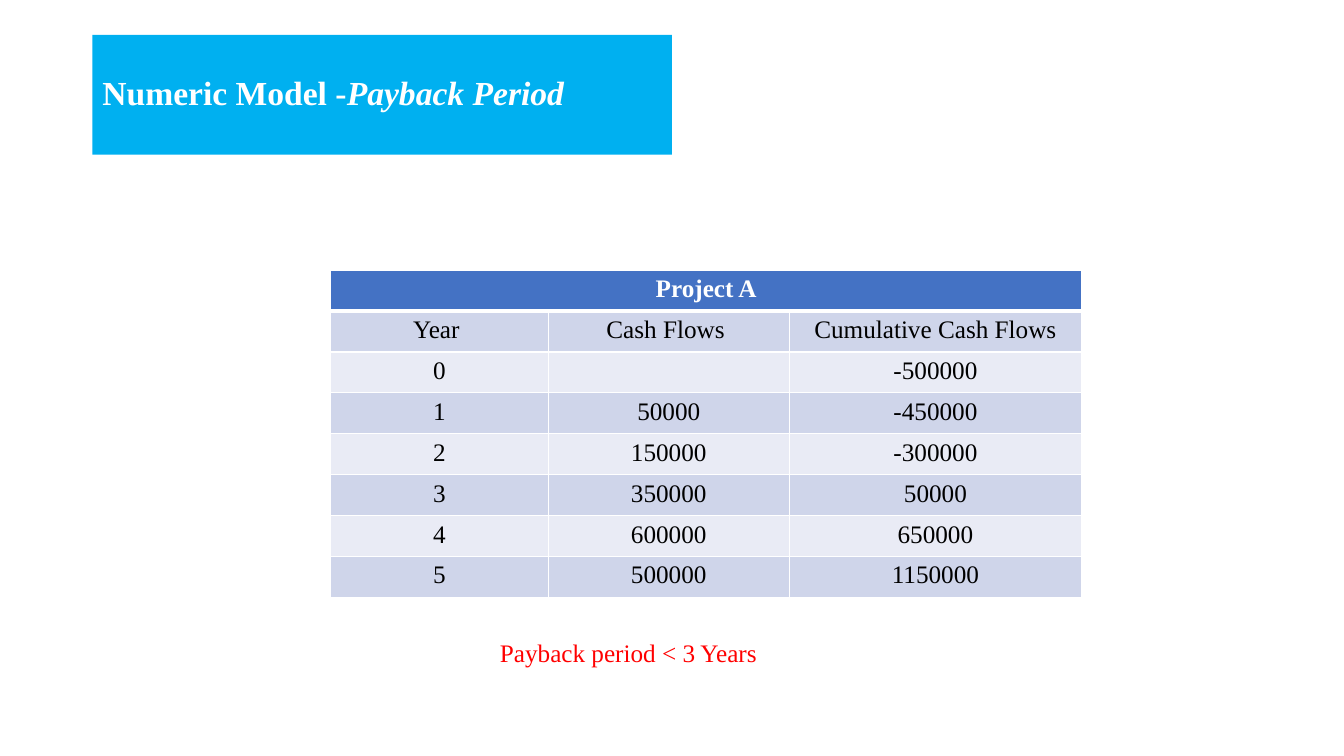
from dataclasses import dataclass

from lxml import etree
from pptx import Presentation
from pptx.dml import color
from pptx.enum import shapes, text
from pptx.oxml import ns
from pptx.util import Pt

FONT = "Times New Roman"
WHITE = "FFFFFF"
HEADER_FILL = "4472C4"
BAND_FILLS = ("CFD5EA", "E9EBF5")
COLUMN_WIDTHS = (155.5, 172, 209)
ROW_HEIGHT = 29.2


@dataclass(frozen=True)
class CashFlowRow:
    year: str
    cash_flow: str
    cumulative: str

    def values(self) -> tuple[str, str, str]:
        return self.year, self.cash_flow, self.cumulative


ROWS = (
    CashFlowRow("Year ", "Cash Flows ", "Cumulative Cash Flows"),
    CashFlowRow("0", "", "-500000"),
    CashFlowRow("1", "50000", "-450000"),
    CashFlowRow("2", "150000", "-300000"),
    CashFlowRow("3", "350000", "50000"),
    CashFlowRow("4", "600000", "650000"),
    CashFlowRow("5", "500000", "1150000"),
)


def rgb(value: str) -> color.RGBColor:
    return color.RGBColor.from_string(value)


def add_text(paragraph, content: str, *, size: float = 18, fill: str = "000000",
             bold: bool = False, italic: bool = False) -> None:
    run = paragraph.add_run()
    run.text = content
    run.font.name = FONT
    run.font.size = Pt(size)
    run.font.color.rgb = rgb(fill)
    run.font.bold = bold
    run.font.italic = italic


def add_borders(cell, bottom: float = 1) -> None:
    properties = cell._tc.get_or_add_tcPr()
    for side, width in (("L", 1), ("R", 1), ("T", 1), ("B", bottom)):
        line = etree.SubElement(properties, ns.qn(f"a:ln{side}"), w=str(Pt(width)))
        solid = etree.SubElement(line, ns.qn("a:solidFill"))
        etree.SubElement(solid, ns.qn("a:srgbClr"), val=WHITE)


def fill_cell(cell, content: str, background: str, *, border_bottom: float = 1,
              **text_format) -> None:
    add_borders(cell, border_bottom)
    cell.fill.solid()
    cell.fill.fore_color.rgb = rgb(background)
    paragraph = cell.text_frame.paragraphs[0]
    paragraph.alignment = text.PP_ALIGN.CENTER
    if content:
        add_text(paragraph, content, **text_format)


def add_title(slide) -> None:
    banner = slide.shapes.add_shape(
        shapes.MSO_SHAPE.RECTANGLE, Pt(66), Pt(25), Pt(414), Pt(85.5))
    banner.shadow.inherit = False
    banner.fill.solid()
    banner.fill.fore_color.rgb = rgb("00B0F0")
    banner.line.fill.background()
    banner.text_frame.word_wrap = True
    banner.text_frame.vertical_anchor = text.MSO_ANCHOR.MIDDLE
    paragraph = banner.text_frame.paragraphs[0]
    paragraph.alignment = text.PP_ALIGN.LEFT
    paragraph.line_spacing = 0.9
    add_text(paragraph, "Numeric Model -", size=24, fill=WHITE, bold=True)
    add_text(paragraph, "Payback Period", size=24, fill=WHITE, bold=True, italic=True)


def add_cash_flow_table(slide) -> None:
    row_count = len(ROWS) + 1
    table = slide.shapes.add_table(
        row_count, len(COLUMN_WIDTHS), Pt(236.2), Pt(193),
        Pt(sum(COLUMN_WIDTHS)), Pt(ROW_HEIGHT * row_count)).table
    for column, width in zip(table.columns, COLUMN_WIDTHS):
        column.width = Pt(width)
    for row in table.rows:
        row.height = Pt(ROW_HEIGHT)

    header = table.cell(0, 0)
    header.merge(table.cell(0, len(COLUMN_WIDTHS) - 1))
    fill_cell(header, "Project A", HEADER_FILL, border_bottom=3, fill=WHITE, bold=True)
    for index, row in enumerate(ROWS):
        for column_index, value in enumerate(row.values()):
            fill_cell(table.cell(index + 1, column_index), value, BAND_FILLS[index % 2])


def add_conclusion(slide) -> None:
    box = slide.shapes.add_textbox(Pt(350), Pt(451.5), Pt(216.7), Pt(29))
    box.text_frame.word_wrap = True
    box.text_frame.auto_size = text.MSO_AUTO_SIZE.SHAPE_TO_FIT_TEXT
    add_text(box.text_frame.paragraphs[0], "Payback period < 3 Years", fill="FF0000")


def main() -> None:
    presentation = Presentation()
    presentation.slide_width = Pt(960)
    presentation.slide_height = Pt(540)
    slide = presentation.slides.add_slide(presentation.slide_layouts[6])
    add_cash_flow_table(slide)
    add_title(slide)
    add_conclusion(slide)
    presentation.save("out.pptx")


if __name__ == "__main__":
    main()
